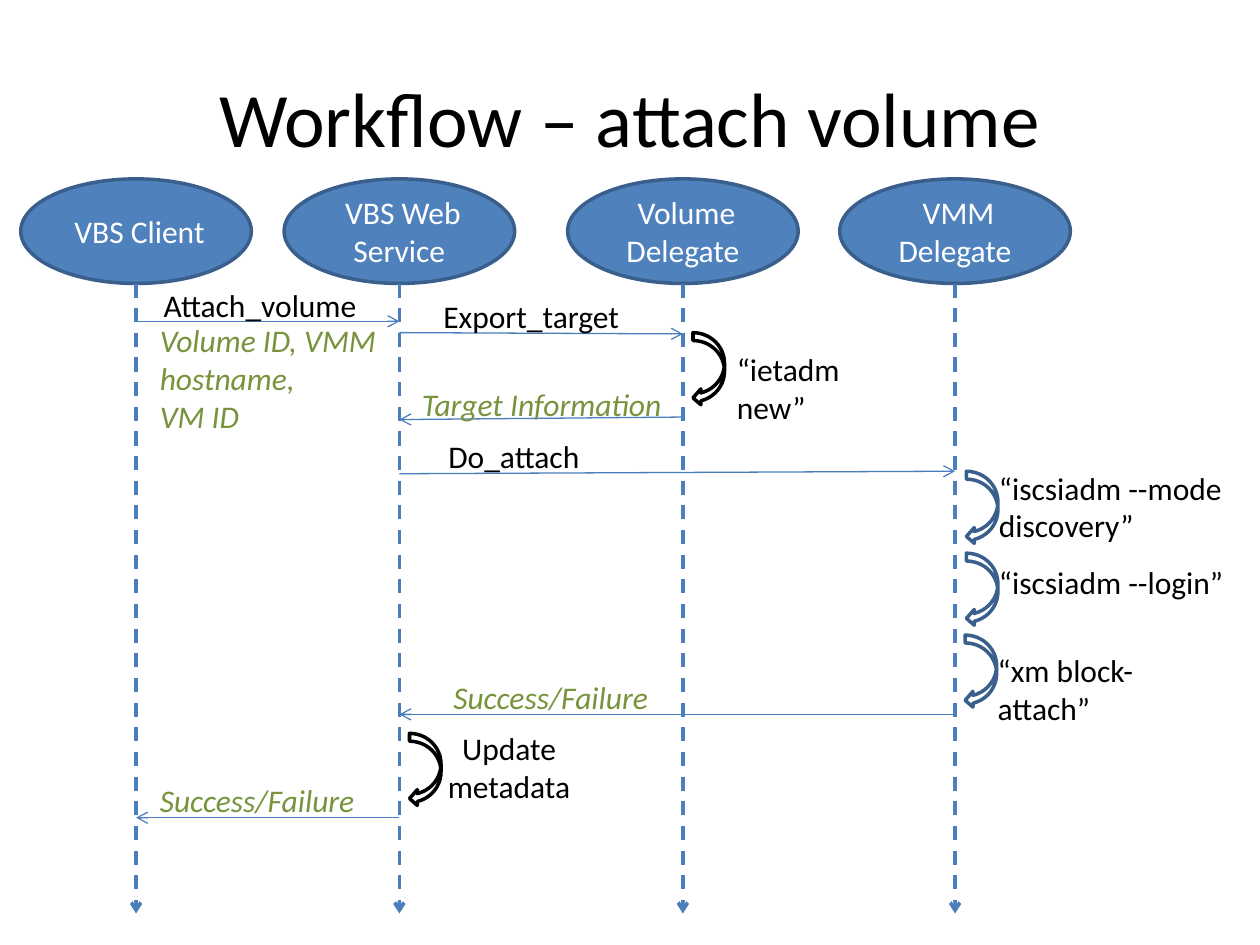
"""Build the attach volume workflow sequence diagram."""
import pptx
import pptx.util
import pptx.dml.color
import pptx.enum.dml
import pptx.enum.shapes
import pptx.enum.text
import pptx.oxml

Inches, Pt = pptx.util.Inches, pptx.util.Pt
RGBColor = pptx.dml.color.RGBColor
MSO_SHAPE = pptx.enum.shapes.MSO_SHAPE
PP_ALIGN = pptx.enum.text.PP_ALIGN
MSO_ANCHOR = pptx.enum.text.MSO_ANCHOR
BLACK = RGBColor(0x00, 0x00, 0x00)
WHITE = RGBColor(0xFF, 0xFF, 0xFF)
BLUE = RGBColor(0x4F, 0x81, 0xBD)
OUTLINE = RGBColor(0x3A, 0x5F, 0x8C)
LINE = RGBColor(0x4B, 0x7E, 0xBC)
GREEN = RGBColor(0x77, 0x93, 0x3C)
NS = 'xmlns:a="http://schemas.openxmlformats.org/drawingml/2006/main"'

prs = pptx.Presentation()
prs.slide_width, prs.slide_height = Inches(10), Inches(7.5)
s = prs.slides.add_slide(prs.slide_layouts[6])


def write(sp, text, size=18, color=BLACK, italic=False,
          align=PP_ALIGN.LEFT, anchor=MSO_ANCHOR.TOP):
    tf = sp.text_frame
    tf.word_wrap = True
    tf.vertical_anchor = anchor
    for i, line in enumerate(text.split("\n")):
        p = tf.add_paragraph() if i else tf.paragraphs[0]
        p.alignment = align
        r = p.add_run()
        r.text = line
        r.font.name = "Calibri"
        r.font.size = Pt(size)
        r.font.italic = italic
        r.font.color.rgb = color


def add_arrow(x1, y1, x2, y2, width=0.75, dash=None):
    c = s.shapes.add_connector(pptx.enum.shapes.MSO_CONNECTOR.STRAIGHT,
                               Inches(x1), Inches(y1), Inches(x2), Inches(y2))
    c.line.color.rgb = LINE
    c.line.width = Pt(width)
    c.line.dash_style = dash
    c.line._get_or_add_ln().append(pptx.oxml.parse_xml(f'<a:tailEnd {NS} type="arrow"/>'))
    c._element.spPr.append(pptx.oxml.parse_xml(f"<a:effectLst {NS}/>"))


title = s.shapes.add_textbox(Inches(0.5), Inches(0.3), Inches(9), Inches(1.25))
write(title, "Workflow – attach volume", size=44,
      align=PP_ALIGN.CENTER, anchor=MSO_ANCHOR.MIDDLE)

CLIENT, SERVICE, VOLUME, VMM = 1.08, 3.17, 5.42, 7.58
actors = [
    (CLIENT, " VBS Client"),
    (SERVICE, " VBS Web Service"),
    (VOLUME, " Volume Delegate"),
    (VMM, " VMM Delegate"),
]
for x, name in actors:
    sp = s.shapes.add_shape(MSO_SHAPE.OVAL, Inches(x - 0.915), Inches(1.42),
                            Inches(1.83), Inches(0.83))
    sp.shadow.inherit = False
    sp.fill.solid()
    sp.fill.fore_color.rgb = BLUE
    sp.line.color.rgb = OUTLINE
    sp.line.width = Pt(2)
    write(sp, name, color=WHITE, align=PP_ALIGN.CENTER, anchor=MSO_ANCHOR.MIDDLE)
    add_arrow(x, 2.25, x, 7.25, width=2, dash=pptx.enum.dml.MSO_LINE.DASH)

messages = [
    (CLIENT, 2.55, SERVICE, 2.55),
    (SERVICE, 2.64, VOLUME, 2.65),
    (VOLUME, 3.31, SERVICE, 3.33),
    (SERVICE, 3.76, VMM, 3.74),
    (VMM, 5.67, SERVICE, 5.67),
    (SERVICE, 6.49, CLIENT, 6.49),
]
for message in messages:
    add_arrow(*message)

self_calls = [
    (5.5, 2.64, BLACK),
    (7.67, 3.74, OUTLINE),
    (7.67, 4.39, OUTLINE),
    (7.66, 5.04, OUTLINE),
    (3.25, 5.82, BLACK),
]
for x, y, color in self_calls:
    sp = s.shapes.add_shape(MSO_SHAPE.CURVED_LEFT_ARROW, Inches(x), Inches(y),
                            Inches(0.25), Inches(0.58))
    sp.shadow.inherit = False
    sp.fill.background()
    sp.line.color.rgb = color
    sp.line.width = Pt(2)

result = {"color": GREEN, "italic": True}
labels = [
    (1.2, 2.22, 1.75, 0.4, "Attach_volume", {}),
    (1.17, 2.5, 1.92, 1.01, "Volume ID, VMM hostname,\nVM ID", result),
    (3.42, 2.31, 1.92, 0.4, "Export_target", {}),
    (5.75, 2.73, 1.2, 0.71, "“ietadm new”", {}),
    (3.25, 3.01, 2.17, 0.4, "Target Information", result),
    (3.46, 3.42, 1.75, 0.4, "Do_attach", {}),
    (7.83, 3.67, 2.17, 0.71, "“iscsiadm --mode discovery”", {}),
    (7.83, 4.42, 2.17, 0.4, "“iscsiadm --login”", {}),
    (7.82, 5.12, 1.5, 0.71, "“xm block-attach”", {}),
    (3.5, 5.33, 1.83, 0.4, "Success/Failure", result),
    (3.33, 5.74, 1.42, 0.71, "Update metadata", {"align": PP_ALIGN.CENTER}),
    (1.17, 6.15, 1.83, 0.4, "Success/Failure", result),
]
for x, y, w, h, text, style in labels:
    sp = s.shapes.add_textbox(Inches(x), Inches(y), Inches(w), Inches(h))
    write(sp, text, **style)

prs.save("out.pptx")
